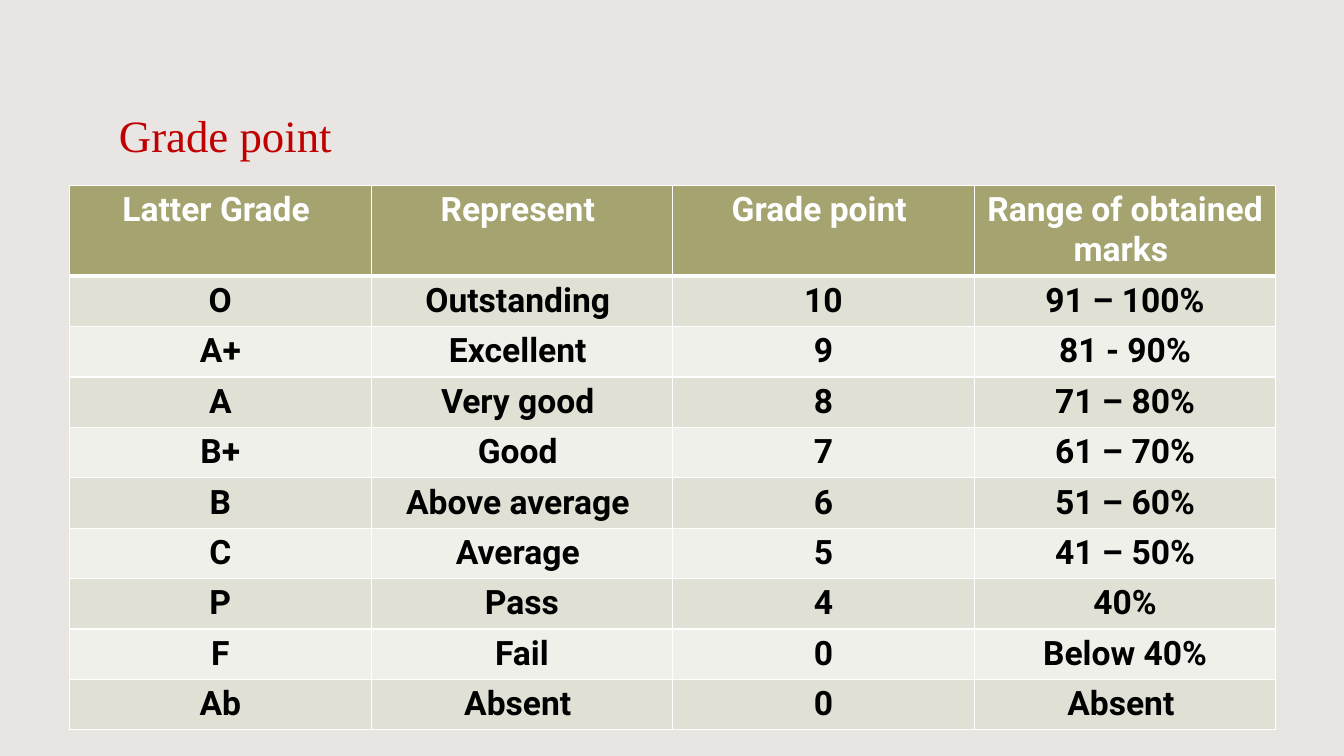
from dataclasses import dataclass

from lxml.etree import SubElement
from pptx import Presentation
from pptx.dml.color import RGBColor
from pptx.enum.text import MSO_ANCHOR, PP_ALIGN
from pptx.oxml.ns import qn
from pptx.util import Pt

COLOURS = {
    "background": "E8E5E2",
    "title": "C00000",
    "header": "A5A470",
    "odd_row": "E1E0D5",
    "even_row": "F0F0EB",
    "white": "FFFFFF",
    "black": "000000",
}
COLUMN_WIDTH = 215.42
HEADER_HEIGHT = 64.8
ROW_HEIGHT = 36


@dataclass
class Grade:
    letter: str
    meaning: str
    point: str
    marks: str


HEADER = Grade("Latter Grade ", "Represent ", "Grade point ", "Range of obtained marks ")
GRADES = [
    Grade("O", "Outstanding ", "10", "91 – 100%"),
    Grade("A+", "Excellent ", "9", "81 - 90%"),
    Grade("A", "Very good ", "8", "71 – 80%"),
    Grade("B+", "Good ", "7", "61 – 70%"),
    Grade("B", "Above average ", "6", "51 – 60%"),
    Grade("C", "Average ", "5", "41 – 50%"),
    Grade("P", "Pass", "4", "40%"),
    Grade("F", "Fail", "0", "Below 40%"),
    Grade("Ab", "Absent ", "0", "Absent "),
]


def colour(name: str) -> RGBColor:
    return RGBColor.from_string(COLOURS[name])


def write_text(frame, text: str, *, font: str, size: float, fill: str,
               bold: bool = False, align=PP_ALIGN.LEFT, anchor=MSO_ANCHOR.TOP) -> None:
    frame.word_wrap = True
    frame.vertical_anchor = anchor
    para = frame.paragraphs[0]
    para.alignment = align
    span = para.add_run()
    span.text = text
    span.font.name = font
    span.font.size = Pt(size)
    span.font.bold = bold
    span.font.color.rgb = colour(fill)


def add_borders(cell, *, top: float = 1, bottom: float = 1) -> None:
    properties = cell._tc.get_or_add_tcPr()
    for side, width in (("L", 1), ("R", 1), ("T", top), ("B", bottom)):
        line = SubElement(properties, qn(f"a:ln{side}"), w=str(Pt(width)))
        solid = SubElement(line, qn("a:solidFill"))
        SubElement(solid, qn("a:srgbClr"), val=COLOURS["white"])


def add_title(page) -> None:
    box = page.shapes.title
    box.left, box.top, box.width, box.height = Pt(77.76), Pt(30.96), Pt(804.24), Pt(87.84)
    write_text(box.text_frame, "Grade point", font="Times New Roman", size=32,
               fill="title", anchor=MSO_ANCHOR.BOTTOM)


def add_grade_table(page) -> None:
    rows = [HEADER, *GRADES]
    table = page.shapes.add_table(
        len(rows), 4, Pt(49.68), Pt(132.48), Pt(4 * COLUMN_WIDTH),
        Pt(HEADER_HEIGHT + len(GRADES) * ROW_HEIGHT)).table
    for column in table.columns:
        column.width = Pt(COLUMN_WIDTH)

    for index, grade in enumerate(rows):
        is_header = index == 0
        table.rows[index].height = Pt(HEADER_HEIGHT if is_header else ROW_HEIGHT)
        band = "header" if is_header else ("odd_row" if index % 2 else "even_row")
        texts = (grade.letter, grade.meaning, grade.point, grade.marks)
        for cell, text in zip(table.rows[index].cells, texts):
            # The rule under the header is heavier than the others
            add_borders(cell, top=3 if index == 1 else 1, bottom=3 if is_header else 1)
            cell.fill.solid()
            cell.fill.fore_color.rgb = colour(band)
            write_text(cell.text_frame, text, font="Roboto", size=24, bold=True,
                       fill="white" if is_header else "black", align=PP_ALIGN.CENTER)


def main() -> None:
    deck = Presentation()
    deck.slide_width, deck.slide_height = Pt(960), Pt(540)
    page = deck.slides.add_slide(deck.slide_layouts[5])

    # Background
    page.background.fill.solid()
    page.background.fill.fore_color.rgb = colour("background")

    # Content
    add_title(page)
    add_grade_table(page)
    deck.save("out.pptx")


if __name__ == "__main__":
    main()
